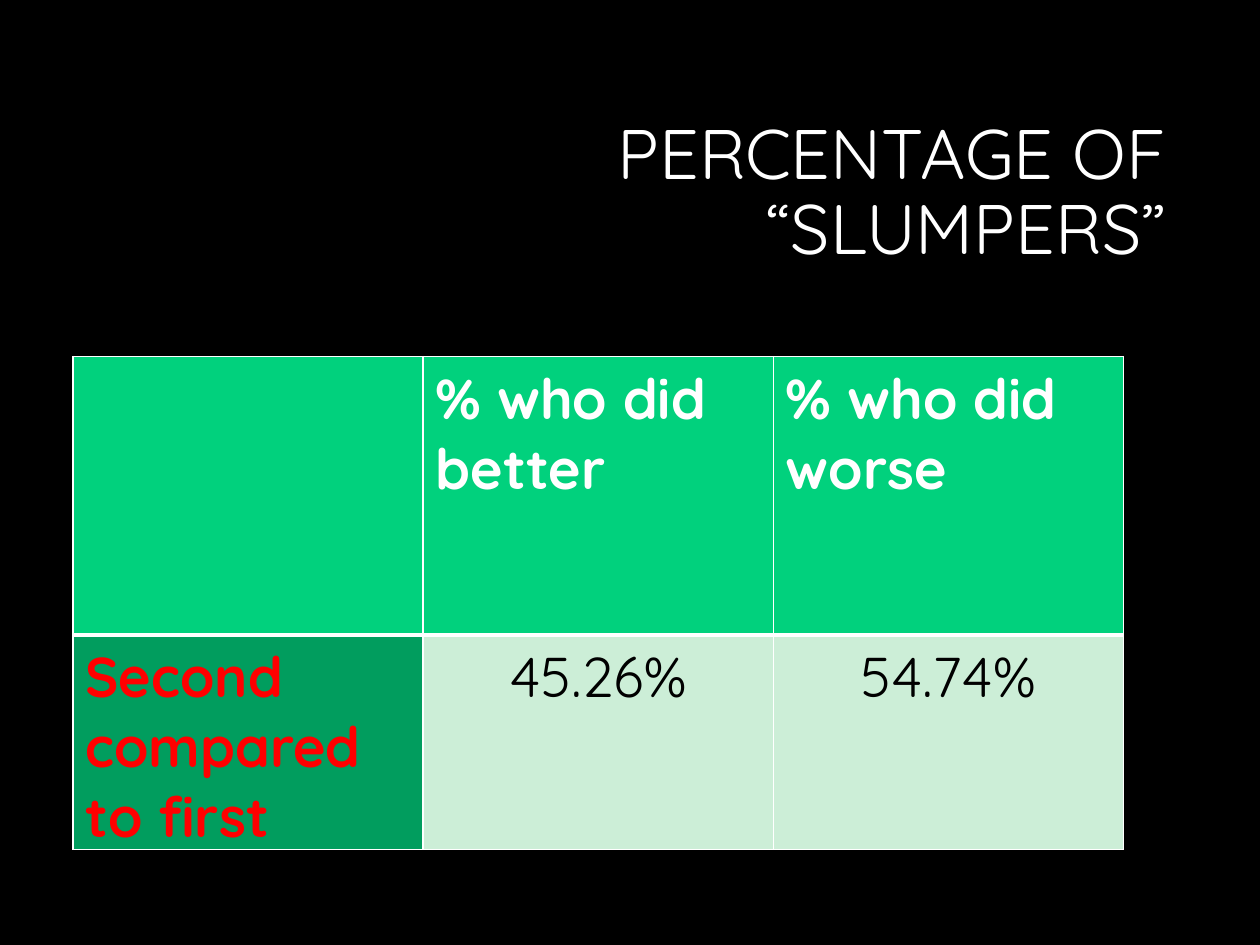
from lxml import etree
from pptx import Presentation
from pptx.dml.color import RGBColor
from pptx.enum.text import MSO_ANCHOR, PP_ALIGN
from pptx.oxml.ns import qn
from pptx.util import Cm, Pt

LEFT, CENTER, RIGHT = PP_ALIGN.LEFT, PP_ALIGN.CENTER, PP_ALIGN.RIGHT
MIDDLE = MSO_ANCHOR.MIDDLE

FONT = "Quicksand"
COLORS = {
    "black": "000000",
    "white": "FFFFFF",
    "red": "FF0000",
    "header": "01D17D",
    "label": "019D5E",
    "value": "CCEED7",
}
TITLE = "PERCENTAGE OF “SLUMPERS”"
ROWS = [
    ["", "% who did better", "% who did worse"],
    ["Second compared to first", "45.26%", "54.74%"],
]
ROW_HEIGHTS = [5.61, 4.32]
COLUMN_WIDTH = 7.06
STYLES = {
    "header": ("white", True, LEFT),
    "label": ("red", True, LEFT),
    "value": ("black", False, CENTER),
}


def color(name):
    return RGBColor.from_string(COLORS[name])


def style_paragraph(para, size, ink, bold, align):
    para.alignment = align
    para.font.name = FONT
    para.font.size = Pt(size)
    para.font.bold = bold
    para.font.color.rgb = color(ink)


def add_borders(cell, widths):
    properties = cell._tc.get_or_add_tcPr()
    for position, (side, width) in enumerate(widths.items()):
        line = etree.Element(qn(f"a:ln{side}"), w=str(Pt(width)))
        fill = etree.SubElement(line, qn("a:solidFill"))
        etree.SubElement(fill, qn("a:srgbClr"), val=COLORS["white"])
        properties.insert(position, line)


def add_title(page):
    box = page.shapes.add_textbox(Cm(6.05), Cm(2.13), Cm(17.7), Cm(3.58))
    frame = box.text_frame
    frame.word_wrap = True
    frame.vertical_anchor = MIDDLE
    para = frame.paragraphs[0]
    para.text = TITLE
    para.line_spacing = 0.9
    style_paragraph(para, 40, "white", False, RIGHT)


def add_results(page):
    columns = len(ROWS[0])
    table = page.shapes.add_table(
        len(ROWS), columns, Cm(1.47), Cm(7.19),
        Cm(COLUMN_WIDTH * columns), Cm(sum(ROW_HEIGHTS)),
    ).table
    for column in table.columns:
        column.width = Cm(COLUMN_WIDTH)
    for r, (texts, height) in enumerate(zip(ROWS, ROW_HEIGHTS)):
        table.rows[r].height = Cm(height)
        for c, text in enumerate(texts):
            role = "header" if r == 0 else "label" if c == 0 else "value"
            cell = table.cell(r, c)
            cell.fill.solid()
            cell.fill.fore_color.rgb = color(role)
            para = cell.text_frame.paragraphs[0]
            para.text = text
            style_paragraph(para, 32, *STYLES[role])
            top, bottom = (1, 3) if r == 0 else (3, 1)
            add_borders(cell, {"L": 1, "R": 1, "T": top, "B": bottom})


def main():
    deck = Presentation()
    deck.slide_width, deck.slide_height = Cm(25.4), Cm(19.05)
    page = deck.slides.add_slide(deck.slide_layouts[6])
    page.background.fill.solid()
    page.background.fill.fore_color.rgb = color("black")
    add_title(page)
    add_results(page)
    deck.save("out.pptx")


if __name__ == "__main__":
    main()
